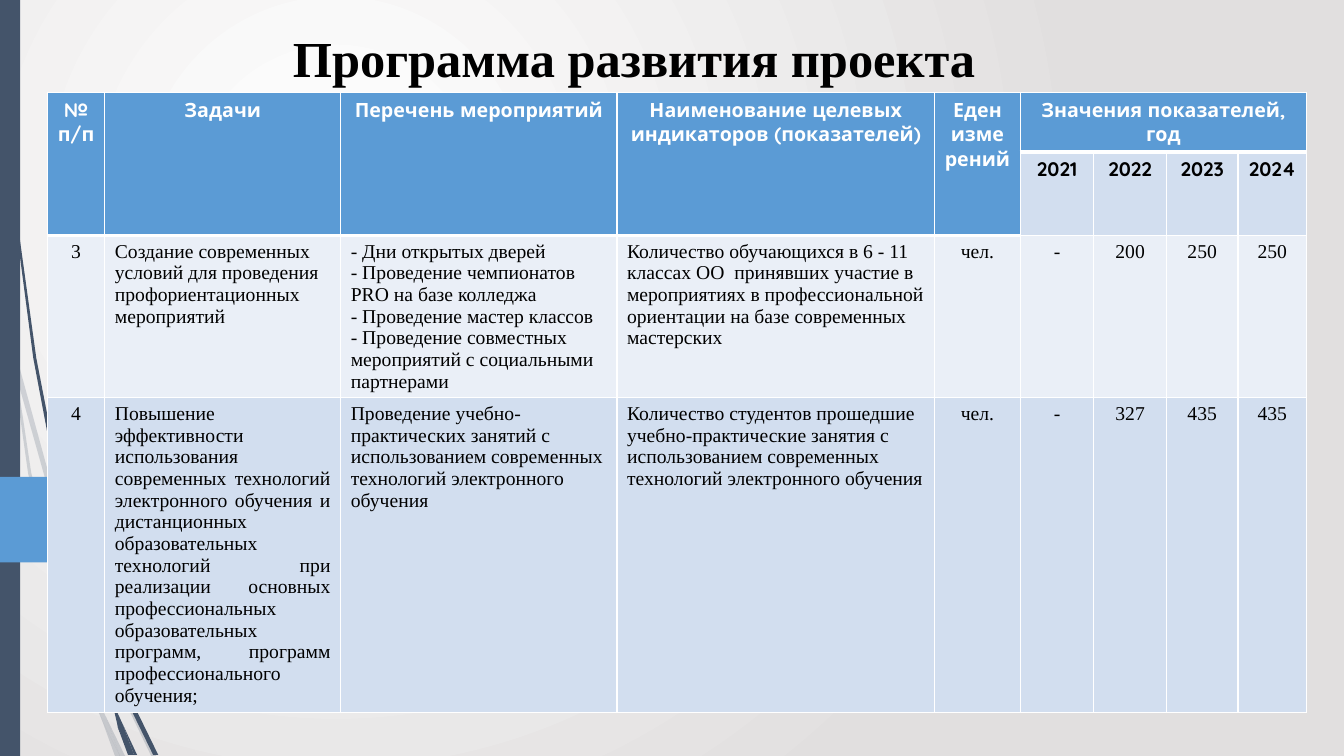
"""Build the slide with the project development programme table."""
from pptx import Presentation
from pptx.dml.color import RGBColor
from pptx.enum.shapes import MSO_SHAPE
from pptx.enum.text import PP_ALIGN
from pptx.oxml import parse_xml
from pptx.oxml.ns import nsdecls
from pptx.util import Inches, Pt

CENTER, LEFT, JUSTIFY = PP_ALIGN.CENTER, PP_ALIGN.LEFT, PP_ALIGN.JUSTIFY
RECTANGLE, TAB = MSO_SHAPE.RECTANGLE, MSO_SHAPE.PENTAGON

THEME = {
    "slate": "44546A", "blue": "5B9BD5", "white": "FFFFFF", "black": "000000",
    "band_dark": "D2DEEF", "band_light": "EAEFF7", "backdrop": "E1DFDF",
    "serif": "Times New Roman", "head": "Quicksand",
    "title_size": 36, "table_size": 14, "thin": 1, "thick": 3,
}

TITLE = "Программа развития проекта"
HEADINGS = [
    "№ п/п", "Задачи", "Перечень мероприятий",
    "Наименование целевых индикаторов (показателей)",
    "Еден измерений", "Значения показателей, год",
]
YEARS = ["2021", "2022", "2023", "2024"]
TASKS = [
    ["3",
     "Создание современных условий для проведения профориентационных мероприятий",
     "- Дни открытых дверей\n- Проведение чемпионатов PRO на базе колледжа\n"
     "- Проведение мастер классов\n"
     "- Проведение совместных мероприятий с социальными партнерами",
     "Количество обучающихся в 6 - 11 классах ОО  принявших участие в мероприятиях "
     "в профессиональной ориентации на базе современных мастерских",
     "чел.", "-", "200", "250", "250"],
    ["4",
     "Повышение эффективности использования современных технологий электронного "
     "обучения и дистанционных образовательных технологий при реализации основных "
     "профессиональных образовательных программ, программ профессионального обучения;",
     "Проведение учебно-практических занятий с использованием современных "
     "технологий электронного обучения",
     "Количество студентов прошедшие учебно-практические занятия с использованием "
     "современных технологий электронного обучения",
     "чел.", "-", "327", "435", "435"],
]
COLUMN_WIDTHS = [0.57, 2.34, 2.74, 3.15, 0.85, 0.73, 0.72, 0.71, 0.68]
ROW_HEIGHTS = [0.58, 0.83, 1.61, 3.12]
FIRST_YEAR = len(HEADINGS) - 1
TEXT_COLUMNS = (1, 2, 3)

PALE_WISPS = [
    [(0.11, 3.5), (0.09, 3.22), (0, 2.82), (0, 2.99), (0.1, 3.44)],
    [(0.58, 5.22), (0.84, 5.99), (0.85, 5.86), (0.62, 5.2), (0.14, 3.45), (0.17, 3.76)],
    [(0.92, 6.07), (0.88, 5.96), (0.88, 6.1), (1.23, 6.94), (1.5, 7.5), (1.55, 7.5),
     (1.27, 6.92)],
    [(1.19, 7.5), (1.24, 7.5), (1.05, 7.11)],
    [(0.93, 6.83), (0.7, 6.19), (0.31, 4.69), (0.17, 3.76), (0.11, 3.5), (0.28, 4.7),
     (0.65, 6.21), (0.92, 6.93), (1.01, 7.14), (0.99, 7.07)],
    [(1.01, 7.14), (1.14, 7.5), (1.19, 7.5)],
    [(0.96, 6.92), (0.93, 6.83), (0.99, 7.07), (1.01, 7.14), (1.19, 7.5), (1.05, 7.11)],
]
DARK_WISPS = [
    [(0.07, 1.1), (0.17, 2.33), (0.33, 3.55), (0.56, 4.77), (0.57, 4.81), (0.55, 4.53),
     (0.36, 3.55), (0.19, 2.32), (0.08, 1.09), (0.05, 0.48), (0.04, 0), (0.03, 0),
     (0.04, 0.48)],
    [(1.13, 6.49), (1.1, 6.41), (1.11, 6.56), (1.32, 7.08), (1.52, 7.49), (1.57, 7.49),
     (1.36, 7.06)],
    [(1.33, 7.49), (1.36, 7.49), (1.22, 7.19)],
    [(1.17, 7.22), (1.27, 7.49), (1.31, 7.49)],
    [(1.16, 7.06), (1.1, 6.91), (1.16, 7.17), (1.17, 7.22), (1.3, 7.49), (1.33, 7.49),
     (1.22, 7.19)],
]


def color(name):
    return RGBColor.from_string(THEME[name])


def write(frame, text, *, size="table_size", font="serif", ink="black", bold=False,
          align=CENTER):
    frame.word_wrap = True
    frame.text = text
    for paragraph in frame.paragraphs:
        paragraph.alignment = align
        for run in paragraph.runs:
            run.font.size = Pt(THEME[size])
            run.font.name = THEME[font]
            run.font.bold = bold
            run.font.color.rgb = color(ink)


def paint(shape, fill, alpha=None):
    shape.shadow.inherit = False
    shape.line.fill.background()
    shape.fill.solid()
    shape.fill.fore_color.rgb = color(fill)
    if alpha:
        for node in shape.element.spPr.iter("{*}srgbClr"):
            node.append(parse_xml(f'<a:alpha {nsdecls("a")} val="{alpha * 1000}"/>'))
    return shape


def add_wisp(slide, points, alpha=None):
    corners = [(Inches(x), Inches(y)) for x, y in points]
    builder = slide.shapes.build_freeform(*corners[0])
    builder.add_line_segments(corners[1:])
    paint(builder.convert_to_shape(), "slate", alpha)


def set_background(slide):
    stops = "".join(
        f'<a:gs pos="{position}"><a:srgbClr val="{THEME[name]}"/></a:gs>'
        for position, name in ((0, "white"), (100000, "backdrop")))
    slide.element.cSld.insert(0, parse_xml(
        f'<p:bg {nsdecls("p", "a")}><p:bgPr><a:gradFill rotWithShape="1">'
        f'<a:gsLst>{stops}</a:gsLst><a:path path="circle">'
        '<a:fillToRect l="50000" t="50000" r="100000" b="100000"/></a:path>'
        '</a:gradFill><a:effectLst/></p:bgPr></p:bg>'))


def set_borders(cell, bottom):
    properties = cell._tc.get_or_add_tcPr()
    for side, width in zip("LRTB", ["thin"] * 3 + [bottom]):
        properties.append(parse_xml(
            f'<a:ln{side} {nsdecls("a")} w="{Pt(THEME[width])}"><a:solidFill>'
            f'<a:srgbClr val="{THEME["white"]}"/></a:solidFill></a:ln{side}>'))


def style_cell(cell, fill, bottom="thin"):
    set_borders(cell, bottom)
    cell.fill.solid()
    cell.fill.fore_color.rgb = color(fill)


def add_programme(slide):
    table = slide.shapes.add_table(
        len(ROW_HEIGHTS), len(COLUMN_WIDTHS), Inches(0.47), Inches(0.92),
        Inches(sum(COLUMN_WIDTHS)), Inches(sum(ROW_HEIGHTS))).table
    table.horz_banding = False
    for column, width in zip(table.columns, COLUMN_WIDTHS):
        column.width = Inches(width)
    for row, height in zip(table.rows, ROW_HEIGHTS):
        row.height = Inches(height)

    for index in range(len(COLUMN_WIDTHS)):
        style_cell(table.cell(0, index), "blue", "thick")
        if index < FIRST_YEAR:
            style_cell(table.cell(1, index), "blue", "thick")
            table.cell(0, index).merge(table.cell(1, index))
    table.cell(0, FIRST_YEAR).merge(table.cell(0, len(COLUMN_WIDTHS) - 1))
    for index, heading in enumerate(HEADINGS):
        write(table.cell(0, index).text_frame, heading, font="head", ink="white", bold=True)
    for index, year in enumerate(YEARS, FIRST_YEAR):
        style_cell(table.cell(1, index), "band_dark")
        write(table.cell(1, index).text_frame, year, font="head", bold=True)

    for row, (task, fill) in enumerate(zip(TASKS, ("band_light", "band_dark")), 2):
        for index, text in enumerate(task):
            align = LEFT if index in TEXT_COLUMNS else CENTER
            if (row, index) == (3, 1):
                align = JUSTIFY
            style_cell(table.cell(row, index), fill)
            write(table.cell(row, index).text_frame, text, align=align)


def main():
    presentation = Presentation()
    presentation.slide_width, presentation.slide_height = Inches(13.33), Inches(7.5)
    slide = presentation.slides.add_slide(presentation.slide_layouts[6])
    set_background(slide)
    for points in PALE_WISPS:
        add_wisp(slide, points, alpha=20)
    for points in DARK_WISPS:
        add_wisp(slide, points)
    paint(slide.shapes.add_shape(RECTANGLE, 0, 0, Inches(0.2), Inches(7.5)), "slate")
    tab = slide.shapes.add_shape(TAB, 0, Inches(4.73), Inches(1.91), Inches(0.85))
    paint(tab, "blue")
    add_programme(slide)
    title = slide.shapes.add_textbox(Inches(1.11), Inches(0.22), Inches(10.36), Inches(0.71))
    write(title.text_frame, TITLE, size="title_size", bold=True)
    presentation.save("out.pptx")


if __name__ == "__main__":
    main()
